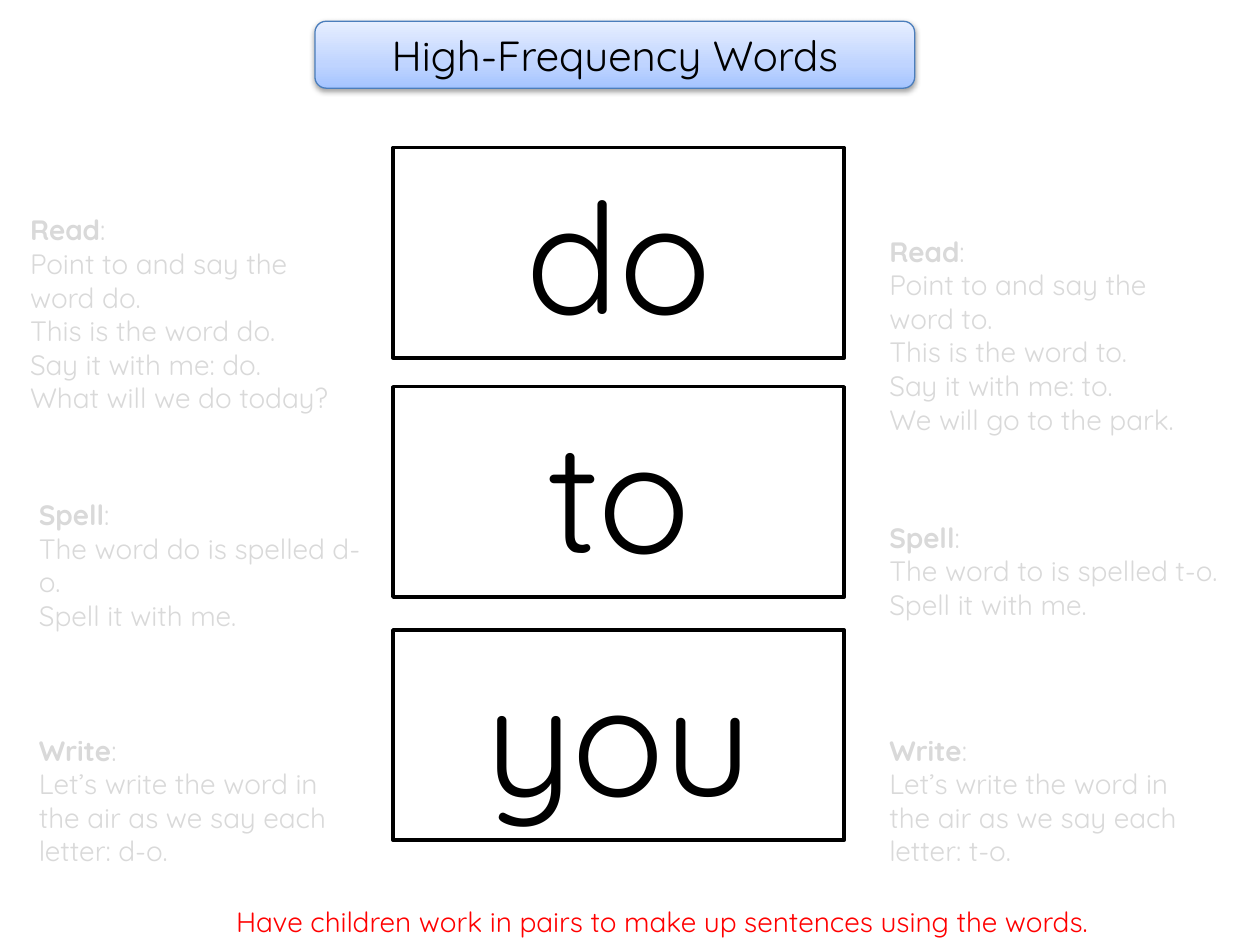
from copy import deepcopy

from lxml import etree
from pptx import Presentation
from pptx.dml.color import RGBColor
from pptx.enum.shapes import MSO_SHAPE
from pptx.enum.text import MSO_ANCHOR, PP_ALIGN
from pptx.oxml.ns import qn
from pptx.util import Pt

RECTANGLE = MSO_SHAPE.RECTANGLE
ROUNDED = MSO_SHAPE.ROUNDED_RECTANGLE
MIDDLE = MSO_ANCHOR.MIDDLE
TOP = MSO_ANCHOR.TOP
CENTER = PP_ALIGN.CENTER
LEFT = PP_ALIGN.LEFT

FONT = "Quicksand"
COLORS = {
    "ink": "000000",
    "card": "FFFFFF",
    "note": "D9D9D9",
    "task": "FF0000",
    "banner_line": "4B7EBC",
    "banner_low": "A4C4FF",
    "banner_mid": "BFD4FF",
    "banner_high": "E6EEFF",
}


def color(name):
    return RGBColor.from_string(COLORS[name])


def write_text(shape, lines, size=16, fill="ink", align=LEFT, anchor=TOP, heading=None):
    frame = shape.text_frame
    frame.word_wrap = True
    frame.vertical_anchor = anchor
    paragraphs = [[(line, False)] for line in lines]
    if heading:
        paragraphs.insert(0, [(heading, True), (":", False)])
    for index, runs in enumerate(paragraphs):
        paragraph = frame.add_paragraph() if index else frame.paragraphs[0]
        paragraph.alignment = align
        for text, bold in runs:
            run = paragraph.add_run()
            run.text = text
            run.font.name = FONT
            run.font.size = Pt(size)
            run.font.bold = bold
            run.font.color.rgb = color(fill)


def add_box(slide, kind, box, line, line_width):
    shape = slide.shapes.add_shape(kind, *map(Pt, box))
    shape.shadow.inherit = False
    shape.line.color.rgb = color(line)
    shape.line.width = Pt(line_width)
    return shape


def fill_gradient(shape, stops, angle):
    shape.fill.gradient()
    shape.fill.gradient_angle = angle
    stop_list = shape._element.spPr.find(".//" + qn("a:gsLst"))
    stop_list.append(deepcopy(stop_list[0]))
    for stop, (position, name) in zip(shape.fill.gradient_stops, stops):
        stop.color.rgb = color(name)
        stop.position = position


def add_shadow(shape, blur, distance, alpha):
    effects = shape._element.spPr.find(qn("a:effectLst"))
    shadow = etree.SubElement(
        effects, qn("a:outerShdw"), blurRad=str(Pt(blur)),
        dist=str(Pt(distance)), dir="5400000", rotWithShape="0")
    tint = etree.SubElement(shadow, qn("a:srgbClr"), val=COLORS["ink"])
    etree.SubElement(tint, qn("a:alpha"), val=str(alpha * 1000))


def add_banner(slide, box, title):
    banner = add_box(slide, ROUNDED, box, "banner_line", 0.75)
    stops = [(0, "banner_low"), (0.35, "banner_mid"), (1, "banner_high")]
    fill_gradient(banner, stops, 90)
    add_shadow(banner, 3.1, 1.6, 38)
    write_text(banner, [title], size=24, align=CENTER, anchor=MIDDLE)


def add_word_card(slide, box, word):
    card = add_box(slide, RECTANGLE, box, "ink", 2)
    card.fill.solid()
    card.fill.fore_color.rgb = color("card")
    write_text(card, [word], size=88, align=CENTER, anchor=MIDDLE)


def add_routine(slide, boxes, word, sentence):
    spelling = "-".join(word)
    steps = {
        "Read": [f"Point to and say the word {word}.", f"This is the word {word}.",
                 f"Say it with me: {word}.", sentence],
        "Spell": [f"The word {word} is spelled {spelling}.", "Spell it with me."],
        "Write": ["Let’s write the word in the air as we say each "
                  f"letter: {spelling}."],
    }
    for box, (heading, lines) in zip(boxes, steps.items()):
        note = slide.shapes.add_textbox(*map(Pt, box))
        write_text(note, lines, fill="note", heading=heading)


def add_task(slide, box, text):
    task = slide.shapes.add_textbox(*map(Pt, box))
    write_text(task, [text], fill="task", align=CENTER)


def main():
    presentation = Presentation()
    presentation.slide_width = Pt(720)
    presentation.slide_height = Pt(540)
    slide = presentation.slides.add_slide(presentation.slide_layouts[6])

    add_banner(slide, (180, 12.2, 342.7, 38.2), "High-Frequency Words")
    for word, top in [("do", 84.4), ("to", 221), ("you", 360)]:
        add_word_card(slide, (224.6, top, 257.8, 120.2), word)
    add_routine(
        slide,
        [(10.1, 118.1, 200.2, 123.8), (15.1, 280.8, 200.2, 85),
         (15.1, 415.4, 200.2, 85)],
        "do", "What will we do today?")
    add_routine(
        slide,
        [(501.1, 130.3, 200.2, 123.8), (501.1, 293.8, 218.9, 65.5),
         (501.1, 415.4, 200.2, 85)],
        "to", "We will go to the park.")
    add_task(slide, (89.3, 513.4, 578.2, 26.6),
             "Have children work in pairs to make up sentences using the words.")

    presentation.save("out.pptx")


if __name__ == "__main__":
    main()
